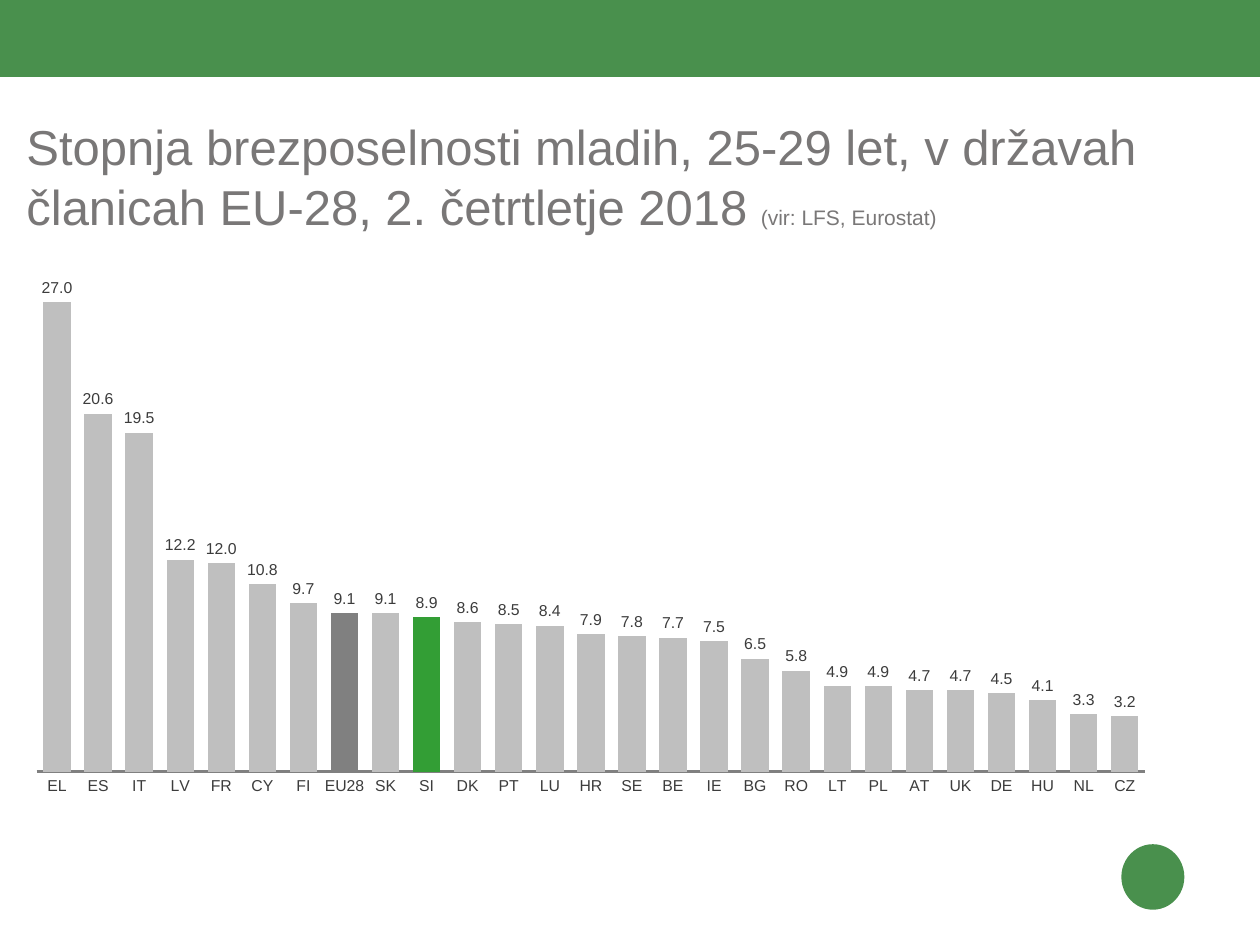
"""Build a slide charting youth unemployment rates in the EU-28 countries."""
from lxml import etree
from pptx import Presentation
from pptx.chart.data import CategoryChartData
from pptx.dml.color import RGBColor
from pptx.enum import chart as ch, shapes, text
from pptx.oxml import ns
from pptx.util import Inches, Pt

GREEN = RGBColor(0x49, 0x90, 0x4D)
SLOVENIA_GREEN = RGBColor(0x33, 0x9E, 0x35)
TITLE_GRAY = RGBColor(0x79, 0x77, 0x77)
LABEL_GRAY = RGBColor(0x3C, 0x3C, 0x3C)
BAR_GRAY = RGBColor(0xBF, 0xBF, 0xBF)
DARK_GRAY = RGBColor(0x80, 0x80, 0x80)
FONT = "Arial"
NUMBER_FORMAT = "#,##0.0"

RATES = {
    "EL": 27.0, "ES": 20.6, "IT": 19.5, "LV": 12.2, "FR": 12.0, "CY": 10.8,
    "FI": 9.7, "EU28": 9.1, "SK": 9.1, "SI": 8.9, "DK": 8.6, "PT": 8.5,
    "LU": 8.4, "HR": 7.9, "SE": 7.8, "BE": 7.7, "IE": 7.5, "BG": 6.5,
    "RO": 5.8, "LT": 4.9, "PL": 4.9, "AT": 4.7, "UK": 4.7, "DE": 4.5,
    "HU": 4.1, "NL": 3.3, "CZ": 3.2,
}
HIGHLIGHTS = {"EU28": DARK_GRAY, "SI": SLOVENIA_GREEN}


def add_run(paragraph, wording, size, color=TITLE_GRAY):
    run = paragraph.add_run()
    run.text = wording
    run.font.name, run.font.size, run.font.bold = FONT, Pt(size), False
    run.font.color.rgb = color


def set_font(font, size, color):
    font.name, font.size = FONT, Pt(size)
    font.color.rgb = color


deck = Presentation()
deck.slide_width, deck.slide_height = Inches(10), Inches(7.5)
slide = deck.slides.add_slide(deck.slide_layouts[5])

for preset, left, top, width, height in (
    (shapes.MSO_SHAPE.RECTANGLE, 0, -0.01, 10, 0.62),
    (shapes.MSO_SHAPE.OVAL, 8.9, 6.7, 0.5, 0.52),
):
    ornament = slide.shapes.add_shape(
        preset, Inches(left), Inches(top), Inches(width), Inches(height))
    ornament.shadow.inherit = False
    ornament.fill.solid()
    ornament.fill.fore_color.rgb = GREEN
    ornament.line.fill.background()

title = slide.shapes.title
title.left, title.top = Inches(0.21), Inches(0.92)
title.width, title.height = Inches(9.26), Inches(0.71)
frame = title.text_frame
frame.margin_left = frame.margin_right = frame.margin_top = frame.margin_bottom = 0
frame.word_wrap = True
frame.auto_size = text.MSO_AUTO_SIZE.NONE
frame.vertical_anchor = text.MSO_ANCHOR.TOP
heading = frame.paragraphs[0]
heading.alignment = text.PP_ALIGN.LEFT
heading.line_spacing = Pt(34)
add_run(heading, "Stopnja brezposelnosti mladih, 25-29 let, v državah "
        "članicah EU-28, 2. četrtletje 2018 ", size=28)
add_run(heading, "(vir: LFS, Eurostat)", size=12)

rates = CategoryChartData(number_format=NUMBER_FORMAT)
rates.categories = list(RATES)
rates.add_series("Series 1", list(RATES.values()))
chart = slide.shapes.add_chart(
    ch.XL_CHART_TYPE.COLUMN_CLUSTERED, Inches(0.2), Inches(1.94),
    Inches(8.98), Inches(4.65), rates).chart
chart.has_legend = False
chart.has_title = False
set_font(chart.font, 10, TITLE_GRAY)

countries = chart.category_axis
countries.major_tick_mark = ch.XL_TICK_MARK.NONE
countries.has_major_gridlines = False
countries.format.line.color.rgb = DARK_GRAY
countries.format.line.width = Pt(1.5)
set_font(countries.tick_labels.font, 9, LABEL_GRAY)

scale = chart.value_axis
scale.minimum_scale, scale.maximum_scale = 0, 30
scale.has_major_gridlines = False
scale.major_tick_mark = ch.XL_TICK_MARK.NONE
scale.tick_label_position = ch.XL_TICK_LABEL_POSITION.NONE
scale.tick_labels.number_format = NUMBER_FORMAT
scale.tick_labels.number_format_is_linked = False
scale.format.line.fill.background()

plot = chart.plots[0]
plot.gap_width = 50
plot.vary_by_categories = False
bars = plot.series[0]
bars.format.fill.solid()
bars.format.fill.fore_color.rgb = BAR_GRAY
for country, color in HIGHLIGHTS.items():
    bar_fill = bars.points[list(RATES).index(country)].format.fill
    bar_fill.solid()
    bar_fill.fore_color.rgb = color

values = bars.data_labels
values.show_value = True
values.position = ch.XL_LABEL_POSITION.OUTSIDE_END
values.number_format = NUMBER_FORMAT
values.number_format_is_linked = False
set_font(values.font, 9, LABEL_GRAY)

plot_area = chart.element.find(".//" + ns.qn("c:plotArea"))
layout = plot_area.find(ns.qn("c:layout"))
if layout is None:
    layout = etree.Element(ns.qn("c:layout"))
    plot_area.insert(0, layout)
manual = etree.SubElement(layout, ns.qn("c:manualLayout"))
for tag, setting in (("layoutTarget", "inner"), ("xMode", "edge"),
                     ("yMode", "edge"), ("x", "0.01"), ("y", "0.01"),
                     ("w", "0.98"), ("h", "0.89")):
    etree.SubElement(manual, ns.qn("c:" + tag)).set("val", setting)

deck.save("out.pptx")
